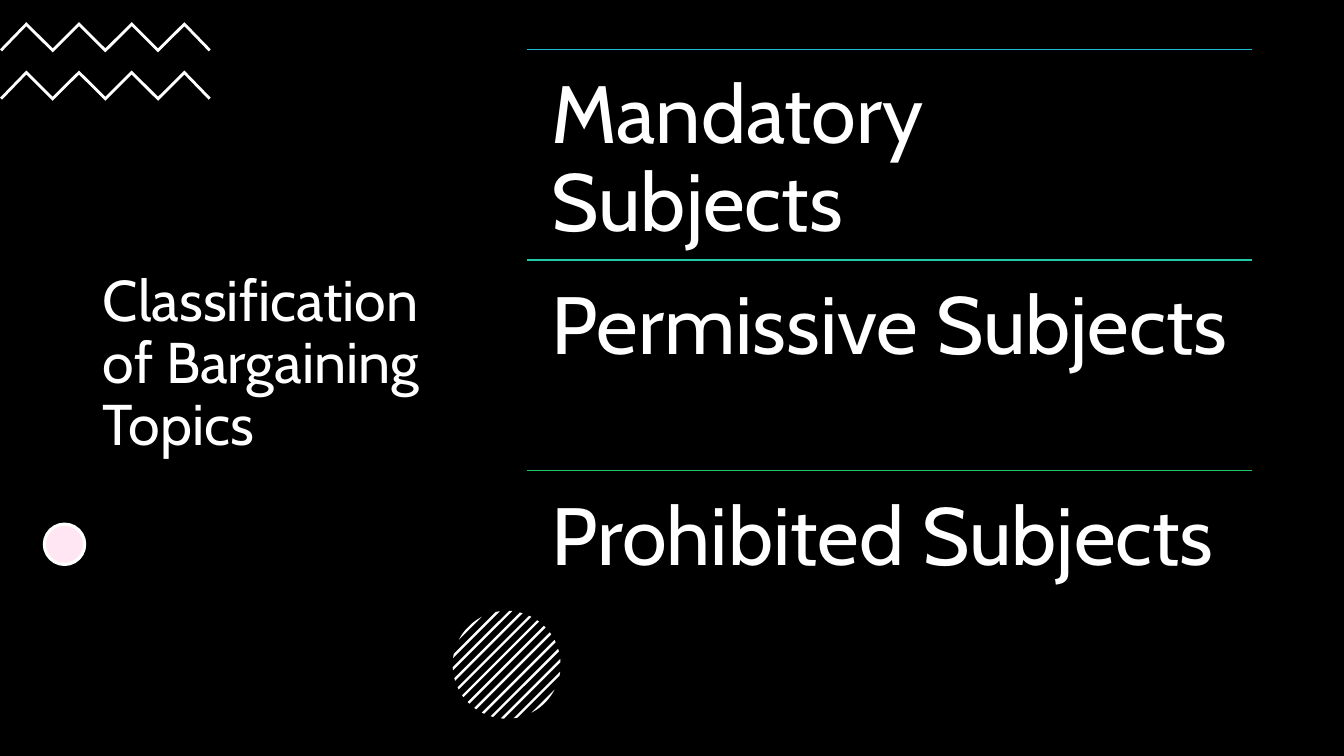
from math import acos, cos, pi, sin

from lxml.etree import SubElement
from pptx import Presentation
from pptx.dml.color import RGBColor
from pptx.enum.shapes import MSO_CONNECTOR as Connector, MSO_SHAPE as Preset
from pptx.enum.text import MSO_ANCHOR as Anchor, MSO_AUTO_SIZE as AutoSize, PP_ALIGN as Align
from pptx.oxml.ns import qn
from pptx.util import Inches, Pt

FONT = "Cabin"
BLACK = RGBColor(0x00, 0x00, 0x00)
WHITE = RGBColor(0xFF, 0xFF, 0xFF)
PINK = RGBColor(0xFF, 0xE6, 0xF2)
BLUE = RGBColor(0x1E, 0xB9, 0xD3)
TEAL = RGBColor(0x20, 0xCB, 0xA9)
GREEN = RGBColor(0x21, 0xC4, 0x6B)
SUBJECTS = [
    ("Mandatory Subjects", BLUE),
    ("Permissive Subjects", TEAL),
    ("Prohibited Subjects", GREEN),
]


def write_text(frame, text, size, anchor):
    """Fill a text frame with one left-aligned white paragraph."""
    frame.text = text
    frame.word_wrap = True
    frame.auto_size = AutoSize.NONE
    frame.vertical_anchor = anchor
    para = frame.paragraphs[0]
    para.alignment = Align.LEFT
    para.line_spacing = 0.9
    font = para.runs[0].font
    font.name, font.size, font.color.rgb = FONT, Pt(size), WHITE


def add_title(page, left, top, width, height):
    """Place the slide title in its box."""
    title = page.shapes.title
    title.left, title.top = Inches(left), Inches(top)
    title.width, title.height = Inches(width), Inches(height)
    write_text(title.text_frame, "Classification of Bargaining Topics", 41, Anchor.MIDDLE)


def add_outline(page, points):
    """Draw a closed white polygon through points given in inches."""
    corners = [(Inches(x), Inches(y)) for x, y in points]
    builder = page.shapes.build_freeform(*corners[0])
    builder.add_line_segments(corners[1:], close=True)
    outline = builder.convert_to_shape()
    outline.shadow.inherit = False
    outline.fill.solid()
    outline.fill.fore_color.rgb = WHITE
    outline.line.fill.background()


def add_zigzag(page, left, top, width, height):
    """Draw a zigzag band with four peaks across the box."""
    thickness, tip = 0.04, 0.02
    step = width / 8
    rise = height - thickness
    turns = [(left + step * i, top + (0 if i % 2 else rise)) for i in range(1, 8)]
    shoulder = top + rise + 0.01
    upper = [(left, shoulder), *turns, (left + width, shoulder)]
    lower = [(x, y + thickness) for x, y in reversed(turns)]
    foot = shoulder + tip
    add_outline(page, [*upper, (left + width - tip, foot), *lower, (left + tip, foot)])


def add_dot(page, left, top, size):
    """Draw the pale pink dot with its white rim."""
    dot = page.shapes.add_shape(Preset.OVAL, Inches(left), Inches(top), Inches(size), Inches(size))
    dot.shadow.inherit = False
    dot.fill.solid()
    dot.fill.fore_color.rgb = PINK
    dot.line.color.rgb = WHITE
    dot.line.width = Pt(2.25)


def add_striped_circle(page, left, top, size):
    """Draw thirteen diagonal stripes clipped to a circle."""
    radius = size / 2
    center_x, center_y = left + radius, top + radius
    pitch, half_width, arc_steps = 0.087, 0.012, 6
    for index in range(-6, 7):
        near, far = (
            acos(max(-1, min(1, (index * pitch + side) / radius)))
            for side in (-half_width, half_width)
        )
        arc = [near + (far - near) * i / arc_steps for i in range(arc_steps + 1)]
        angles = [pi / 4 + a for a in arc] + [pi / 4 - a for a in reversed(arc)]
        add_outline(page, [(center_x + radius * cos(a), center_y + radius * sin(a)) for a in angles])


def add_subjects(page, left, top, width, height):
    """Stack the subjects in equal rows, each under a coloured rule."""
    row_height = height / len(SUBJECTS)
    for index, (subject, color) in enumerate(SUBJECTS):
        x, y = Inches(left), Inches(top + index * row_height)
        rule = page.shapes.add_connector(Connector.STRAIGHT, x, y, x + Inches(width), y)
        rule.line.color.rgb = color
        rule.line.width = Pt(1)
        SubElement(rule._element.spPr, qn("a:effectLst"))
        box = page.shapes.add_textbox(x, y, Inches(width), Inches(row_height))
        frame = box.text_frame
        frame.margin_left = frame.margin_right = Inches(0.24)
        frame.margin_top = frame.margin_bottom = Inches(0.24)
        write_text(frame, subject, 58, Anchor.TOP)


def main():
    """Build the slide and save the deck."""
    deck = Presentation()
    deck.slide_width, deck.slide_height = Inches(13.33), Inches(7.5)
    page = deck.slides.add_slide(deck.slide_layouts[5])
    page.background.fill.solid()
    page.background.fill.fore_color.rgb = BLACK
    add_title(page, 0.92, 1.31, 3.5, 4.63)
    for top in (0.22, 0.7):
        add_zigzag(page, 0, top, 2.09, 0.3)
    add_dot(page, 0.44, 5.2, 0.4)
    add_striped_circle(page, 4.49, 6.06, 1.07)
    add_subjects(page, 5.23, 0.49, 7.19, 6.27)
    deck.save("out.pptx")


if __name__ == "__main__":
    main()
